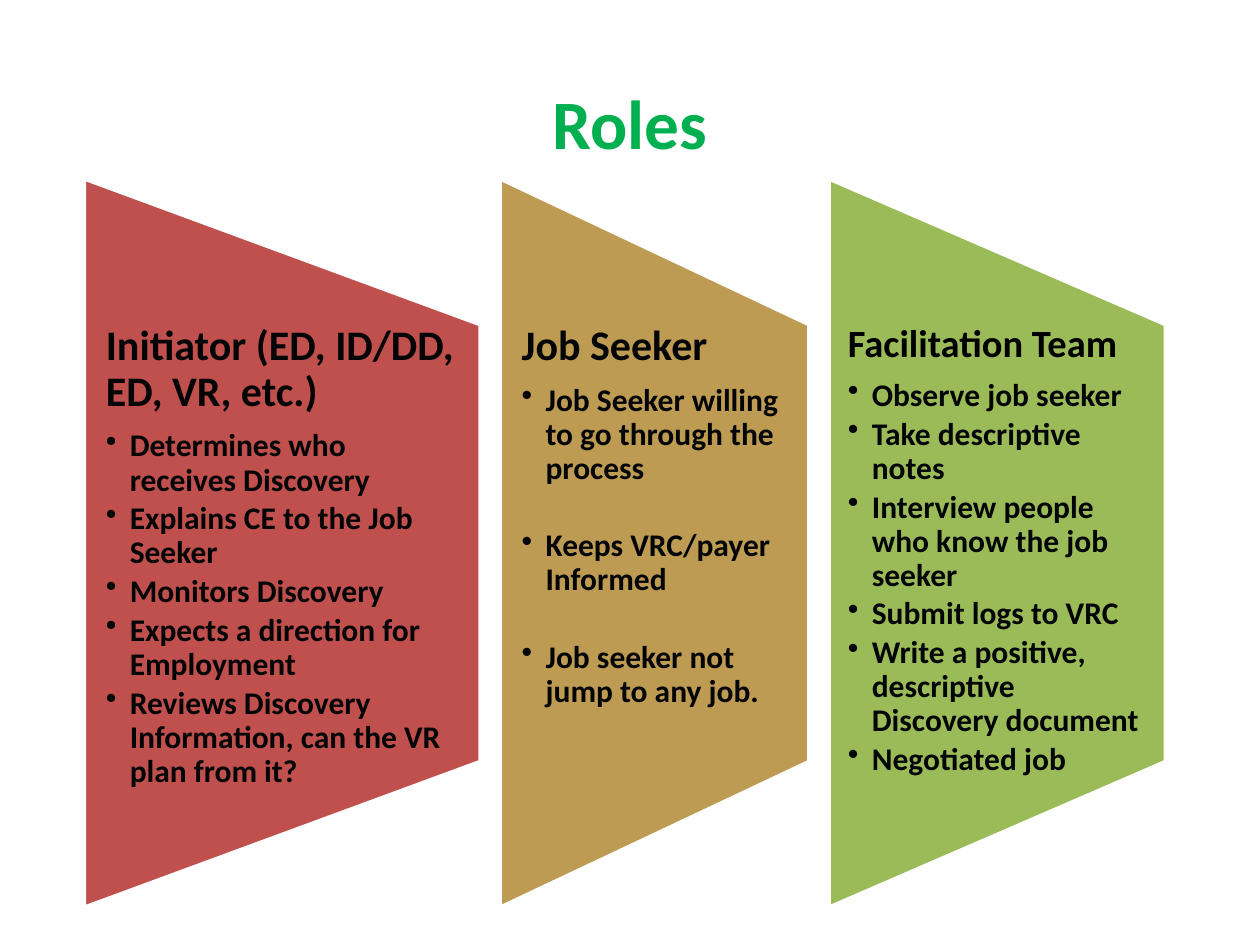
from lxml.etree import SubElement
from pptx import Presentation
from pptx.dml.color import RGBColor
from pptx.enum.shapes import MSO_SHAPE
from pptx.enum.text import MSO_ANCHOR, PP_ALIGN
from pptx.oxml.ns import qn
from pptx.util import Inches, Pt

THEME = {
    "font": "Calibri", "title": "00B050", "text": "030405", "black": "000000",
    "edge": "FFFFFF", "title_size": 39.6, "bullet_size": 18,
}

ROLES = [
    {"heading": "Initiator (ED, ID/DD, ED, VR, etc.)", "size": 24, "color": "text",
     "fill": "C0504D", "width": 3.14, "inset": 0.17, "gap": 2.7,
     "bullets": ["Determines who receives Discovery",
                 "Explains CE to the Job Seeker",
                 "Monitors Discovery",
                 "Expects a direction for Employment",
                 "Reviews Discovery Information, can the VR plan from it?"]},
    {"heading": "Job Seeker", "size": 24, "color": "text",
     "fill": "BD9B53", "width": 2.45, "inset": 0.17, "gap": 24.7,
     "bullets": ["Job Seeker willing to go through the process",
                 "Keeps VRC/payer Informed",
                 "Job seeker not jump to any job."]},
    {"heading": "Facilitation Team", "size": 22, "color": "black",
     "fill": "9BBB59", "width": 2.67, "inset": 0.15, "gap": 2.7,
     "bullets": ["Observe job seeker",
                 "Take descriptive notes",
                 "Interview people who know the job seeker",
                 "Submit logs to VRC",
                 "Write a positive, descriptive Discovery document",
                 "Negotiated job"]},
]

LEFT, GAP, CENTER_Y = 0.67, 0.16, 4.31
PANEL_H, TEXT_H = 5.78, 3.47
INDENT, HEADING_AFTER = 0.19, 0.35


def style(p, size, color):
    for r in p.runs:
        r.font.name = THEME["font"]
        r.font.size = Pt(size)
        r.font.bold = True
        r.font.color.rgb = RGBColor.from_string(color)


def add_bullet(p):
    p.level = 1
    pPr = p._p.get_or_add_pPr()
    pPr.set("marL", str(Inches(INDENT)))
    pPr.set("indent", str(-Inches(INDENT)))
    SubElement(pPr, qn("a:buChar"), char="•")


def add_panel(slide, role, left):
    # Trapezoid turned a quarter turn: its height becomes the column width
    width = role["width"]
    sp = slide.shapes.add_shape(
        MSO_SHAPE.FLOWCHART_MANUAL_OPERATION,
        Inches(left + (width - PANEL_H) / 2), Inches(CENTER_Y - width / 2),
        Inches(PANEL_H), Inches(width))
    sp.rotation = 270
    sp.shadow.inherit = False
    sp.fill.solid()
    sp.fill.fore_color.rgb = RGBColor.from_string(role["fill"])
    sp.line.color.rgb = RGBColor.from_string(THEME["edge"])
    sp.line.width = Pt(2)


def add_role_text(slide, role, left):
    box = slide.shapes.add_textbox(
        Inches(left), Inches(CENTER_Y - TEXT_H / 2),
        Inches(role["width"]), Inches(TEXT_H))
    tf = box.text_frame
    tf.word_wrap = True
    tf.margin_left = tf.margin_right = Inches(role["inset"])
    tf.margin_top = tf.margin_bottom = 0
    tf.text = "\n".join([role["heading"], *role["bullets"]])
    heading, *bullets = tf.paragraphs
    heading.line_spacing = 0.9
    heading.space_after = Pt(role["size"] * HEADING_AFTER)
    style(heading, role["size"], THEME[role["color"]])
    for p in bullets:
        p.line_spacing = 0.9
        p.space_after = Pt(role["gap"])
        add_bullet(p)
        style(p, THEME["bullet_size"], THEME["text"])


def main():
    prs = Presentation()
    prs.slide_width, prs.slide_height = Inches(10), Inches(7.5)
    slide = prs.slides.add_slide(prs.slide_layouts[5])

    # Title
    title = slide.shapes.title
    title.left, title.top = Inches(0.5), Inches(0.3)
    title.width, title.height = Inches(9), Inches(1.25)
    tf = title.text_frame
    tf.text = "Roles"
    tf.vertical_anchor = MSO_ANCHOR.MIDDLE
    tf.margin_top = Inches(0.14)
    tf.paragraphs[0].alignment = PP_ALIGN.CENTER
    style(tf.paragraphs[0], THEME["title_size"], THEME["title"])

    # Role columns, left to right
    left = LEFT
    for role in ROLES:
        add_panel(slide, role, left)
        add_role_text(slide, role, left)
        left += role["width"] + GAP

    prs.save("out.pptx")


if __name__ == "__main__":
    main()
